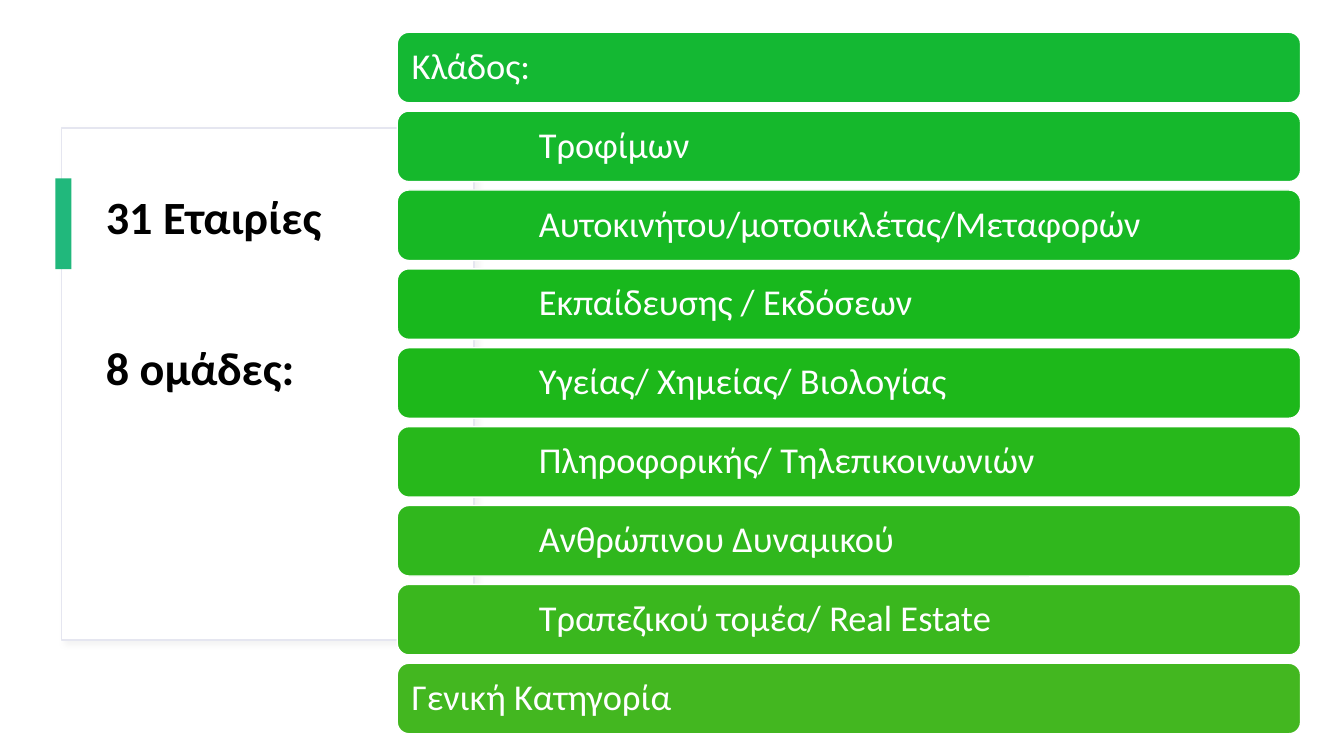
from dataclasses import dataclass

from lxml import etree
from pptx import Presentation
from pptx import util as u
from pptx.dml.color import RGBColor
from pptx.enum import shapes, text
from pptx.oxml import ns

COLORS = {
    "white": "FFFFFF",
    "black": "000000",
    "border": "E5E6F0",
    "shadow": "D9D9D9",
    "accent": "21B87C",
}
FONT = "Calibri"
BAR_LEFT, BAR_WIDTH, BAR_HEIGHT = 3.94, 8.96, 0.7
FIRST_TOP, LAST_TOP = 0.32, 6.58
INSET, INDENT = 0.11, 1.26


@dataclass
class Bar:
    label: str
    fill: str
    indented: bool = True


BARS = [
    Bar("Κλάδος:", "14B833", False),
    Bar("Τροφίμων", "15B82C"),
    Bar("Αυτοκινήτου/μοτοσικλέτας/Μεταφορών", "17B824"),
    Bar("Εκπαίδευσης / Εκδόσεων", "18B81D"),
    Bar("Υγείας/ Χημείας/ Βιολογίας", "1DB81A"),
    Bar("Πληροφορικής/ Τηλεπικοινωνιών", "27B81B"),
    Bar("Ανθρώπινου Δυναμικού", "30B71D"),
    Bar("Τραπεζικού τομέα/ Real Estate", "3AB71E"),
    Bar("Γενική Κατηγορία", "43B720", False),
]


def add_box(parent, kind, left: float, top: float, width: float, height: float,
            fill: str, line: str = ""):
    sp = parent.add_shape(kind, u.Inches(left), u.Inches(top),
                          u.Inches(width), u.Inches(height))
    sp.shadow.inherit = False
    sp.fill.solid()
    sp.fill.fore_color.rgb = RGBColor.from_string(fill)
    if line:
        sp.line.color.rgb = RGBColor.from_string(line)
        sp.line.width = u.Pt(1)
    else:
        sp.line.fill.background()
    return sp


def add_shadow(sp) -> None:
    effects = sp._element.spPr.find(ns.qn("a:effectLst"))
    shadow = etree.SubElement(effects, ns.qn("a:outerShdw"),
                              blurRad=str(u.Pt(4)), dist=str(u.Pt(3)), dir="2700000")
    color = etree.SubElement(shadow, ns.qn("a:srgbClr"), val=COLORS["shadow"])
    etree.SubElement(color, ns.qn("a:alpha"), val="30000")


def write(p, label: str, size: int, color: str, bold: bool = False) -> None:
    p.alignment = text.PP_ALIGN.LEFT
    p.line_spacing = 0.9
    r = p.add_run()
    r.text = label
    r.font.name = FONT
    r.font.size = u.Pt(size)
    r.font.bold = bold
    r.font.color.rgb = RGBColor.from_string(color)


def add_title(slide) -> None:
    title = slide.shapes.title
    title.left, title.top = u.Inches(0.95), u.Inches(1.88)
    title.width, title.height = u.Inches(3.39), u.Inches(3.85)
    tf = title.text_frame
    tf.word_wrap = True
    tf.auto_size = text.MSO_AUTO_SIZE.NONE
    tf.vertical_anchor = text.MSO_ANCHOR.TOP
    write(tf.paragraphs[0], "31 Εταιρίες", 33, COLORS["black"], True)
    p = tf.add_paragraph()
    p.space_before = u.Pt(72)
    write(p, "8 ομάδες:", 33, COLORS["black"], True)


def add_bar(parent, bar: Bar, top: float) -> None:
    sp = add_box(parent, shapes.MSO_SHAPE.ROUNDED_RECTANGLE, BAR_LEFT, top,
                 BAR_WIDTH, BAR_HEIGHT, bar.fill, COLORS["white"])
    tf = sp.text_frame
    tf.word_wrap = True
    tf.vertical_anchor = text.MSO_ANCHOR.MIDDLE
    tf.margin_top = tf.margin_bottom = tf.margin_right = u.Inches(INSET)
    tf.margin_left = u.Inches(INSET + INDENT * bar.indented)
    write(tf.paragraphs[0], bar.label, 26, COLORS["white"])


def main() -> None:
    prs = Presentation()
    prs.slide_width, prs.slide_height = u.Inches(13.33), u.Inches(7.5)
    slide = prs.slides.add_slide(prs.slide_layouts[5])
    rect = shapes.MSO_SHAPE.RECTANGLE
    card = add_box(slide.shapes, rect, 0.61, 1.27, 4.09, 5.08,
                   COLORS["white"], COLORS["border"])
    add_shadow(card)
    title = slide.shapes.title
    card._element.addnext(title._element)
    add_title(slide)
    add_box(slide.shapes, rect, 0.55, 1.77, 0.16, 0.9, COLORS["accent"])
    group = slide.shapes.add_group_shape()
    step = (LAST_TOP - FIRST_TOP) / (len(BARS) - 1)
    for i, bar in enumerate(BARS):
        add_bar(group.shapes, bar, FIRST_TOP + i * step)
    prs.save("out.pptx")


if __name__ == "__main__":
    main()
